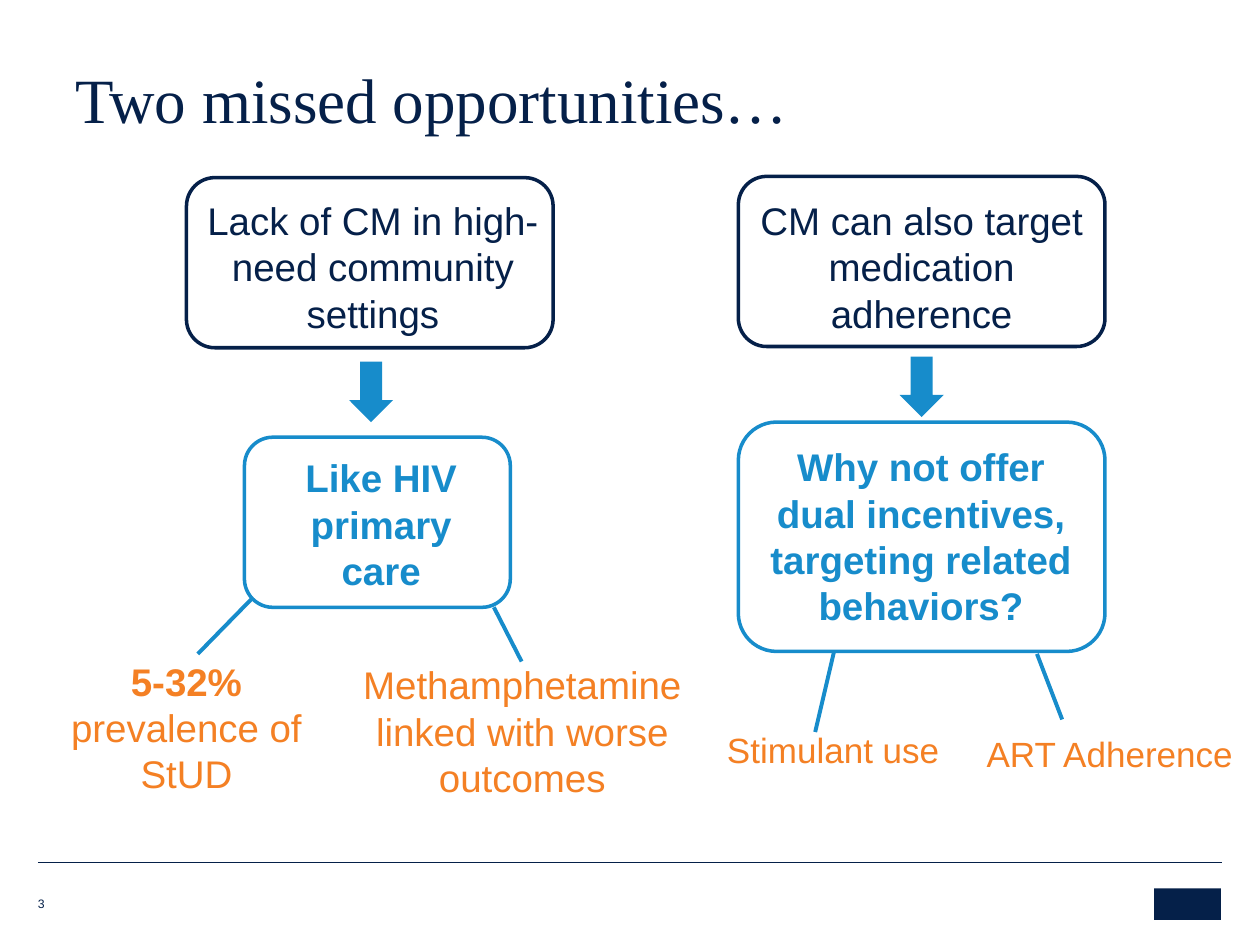
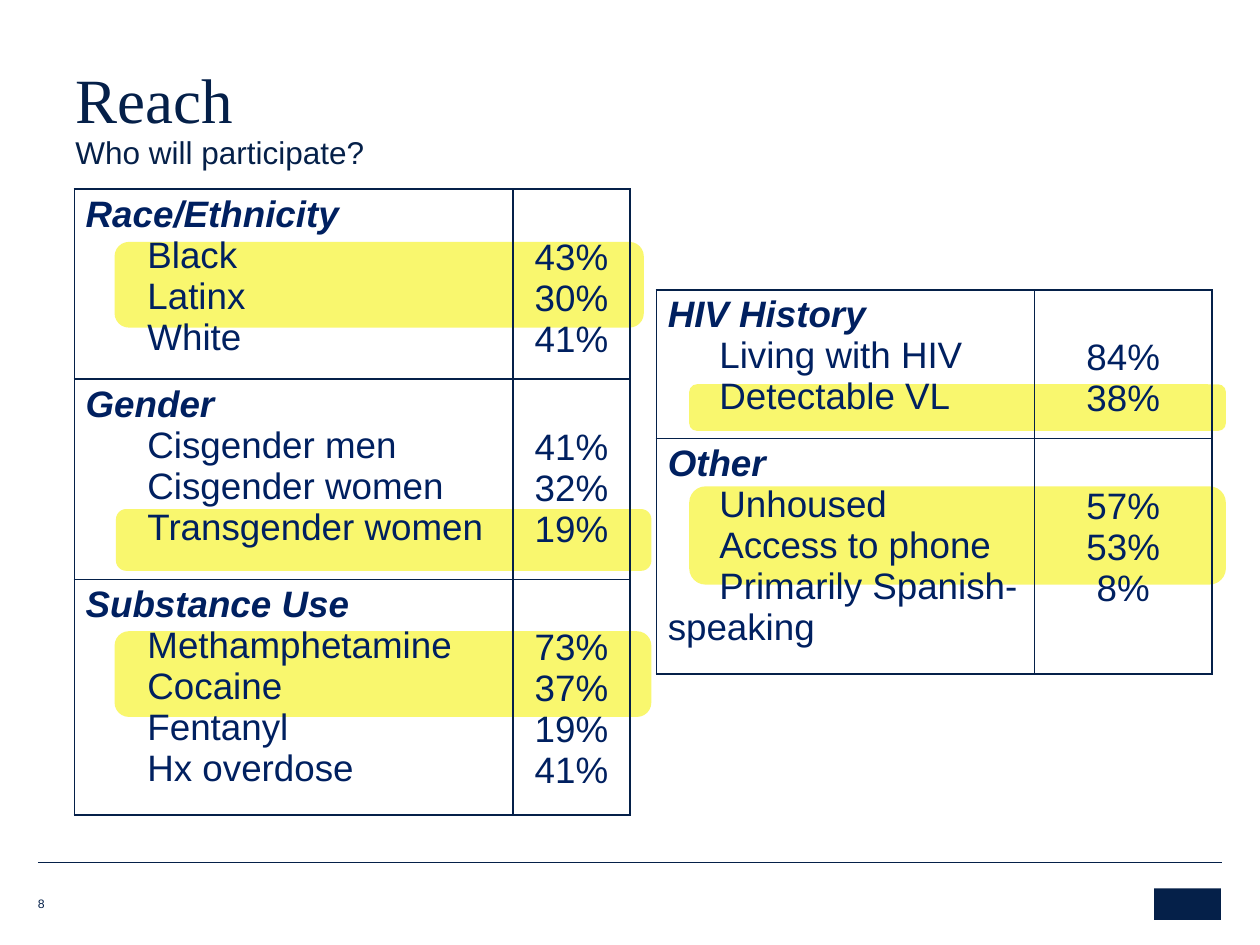
from lxml import etree
from pptx import Presentation
from pptx import util as u
from pptx.dml.color import RGBColor
from pptx.enum import shapes, text
from pptx.oxml.ns import qn

PX = 9144
COLORS = {"navy": "052049", "blue": "178CCB", "orange": "F48024",
          "table": "002060", "yellow": "F5F100"}
BODY_FONT, TITLE_FONT = "Arial", "Times New Roman"
CENTER, LEFT = text.PP_ALIGN.CENTER, text.PP_ALIGN.LEFT

DEMOGRAPHICS = [
    (151, "Race/Ethnicity", [("Black", "43%"), ("Latinx", "30%"), ("White", "41%")]),
    (159, "Gender", [("Cisgender men", "41%"), ("Cisgender women", "32%"),
                     ("Transgender women", "19%")]),
    (187, "Substance Use", [("Methamphetamine", "73%"), ("Cocaine", "37%"),
                            ("Fentanyl", "19%"), ("Hx overdose", "41%")]),
]
HEALTH = [
    (118, "HIV History", [("Living with HIV", "84%"), ("Detectable VL", "38%")]),
    (187, "Other", [("Unhoused", "57%"), ("Access to phone", "53%"),
                    ("Primarily Spanish-speaking", "8%")]),
]


def px(*lengths):
    """Turn pixel lengths into EMU."""
    return [u.Emu(length * PX) for length in lengths]


def rgb(name):
    """Look up a named colour."""
    return RGBColor.from_string(COLORS[name])


def add_run(paragraph, words, size, color, bold=False, italic=False, font=BODY_FONT):
    """Add one formatted run to a paragraph."""
    run = paragraph.add_run()
    run.text = words
    run.font.name, run.font.size = font, u.Pt(size)
    run.font.bold, run.font.italic = bold, italic
    run.font.color.rgb = rgb(color)


def set_margins(target, left, top, right, bottom):
    """Set the inner margins of a text frame or a table cell."""
    (target.margin_left, target.margin_top,
     target.margin_right, target.margin_bottom) = px(left, top, right, bottom)


def add_text(slide, at, runs, size, color, align=LEFT, anchor=text.MSO_ANCHOR.TOP,
             margins=(0, 0, 0, 0), wrap=True, font=BODY_FONT):
    """Add a one-paragraph text box from (words, bold) runs."""
    frame = slide.shapes.add_textbox(*px(*at)).text_frame
    frame.word_wrap, frame.vertical_anchor = wrap, anchor
    set_margins(frame, *margins)
    paragraph = frame.paragraphs[0]
    paragraph.alignment = align
    for words, bold in runs:
        add_run(paragraph, words, size, color, bold, font=font)
    return paragraph


def add_filled_shape(slide, kind, at, color):
    """Add a preset shape with a plain fill and no outline."""
    shape = slide.shapes.add_shape(kind, *px(*at))
    shape.shadow.inherit = False
    shape.fill.solid()
    shape.fill.fore_color.rgb = rgb(color)
    shape.line.fill.background()
    return shape


def add_line(slide, start, end, color, width):
    """Add a straight line between two points."""
    line = slide.shapes.add_connector(shapes.MSO_CONNECTOR.STRAIGHT, *px(*start, *end))
    line.line.color.rgb, line.line.width = rgb(color), u.Pt(width)
    etree.SubElement(line._element.spPr, qn("a:effectLst"))


def add_box(slide, at, words, color, margins, bold=False):
    """Add an outlined rounded box holding centred text."""
    box = slide.shapes.add_shape(shapes.MSO_SHAPE.ROUNDED_RECTANGLE, *px(*at))
    box.shadow.inherit = False
    box.fill.background()
    box.line.color.rgb, box.line.width = rgb(color), u.Pt(2)
    frame = box.text_frame
    frame.word_wrap, frame.vertical_anchor = True, text.MSO_ANCHOR.TOP
    set_margins(frame, *margins, 0)
    frame.paragraphs[0].alignment = CENTER
    add_run(frame.paragraphs[0], words, 22, color, bold)


def add_down_arrow(slide, left, top):
    """Add a blue arrow leading to the next box."""
    add_filled_shape(slide, shapes.MSO_SHAPE.DOWN_ARROW, (left, top, 35, 48), "blue")


def add_highlight(slide, at):
    """Add a translucent yellow marker band."""
    band = add_filled_shape(slide, shapes.MSO_SHAPE.ROUNDED_RECTANGLE, at, "yellow")
    color = band._element.spPr.find(qn("a:solidFill")).find(qn("a:srgbClr"))
    etree.SubElement(color, qn("a:alpha"), val="57000")


def style_cell(cell, top):
    """Clear the cell fill and draw its four borders."""
    cell.fill.background()
    set_margins(cell, 9, top, 9, 4)
    properties = cell._tc.get_or_add_tcPr()
    for index, side in enumerate(("lnL", "lnR", "lnT", "lnB")):
        border = etree.Element(qn(f"a:{side}"), w=str(u.Pt(1)))
        fill = etree.SubElement(border, qn("a:solidFill"))
        etree.SubElement(fill, qn("a:srgbClr"), val=COLORS["navy"])
        properties.insert(index, border)


def next_paragraph(frame, is_first):
    """Return the frame's first paragraph or a new one."""
    return frame.paragraphs[0] if is_first else frame.add_paragraph()


def add_group_table(slide, at, widths, indent, groups):
    """Add a table with one row per group of labelled percentages."""
    height = sum(group[0] for group in groups)
    table = slide.shapes.add_table(len(groups), 2, *px(*at, sum(widths), height)).table
    table.first_row = table.horz_banding = False
    for column, width in zip(table.columns, px(*widths)):
        column.width = width
    for row, (row_height, heading, entries) in zip(table.rows, groups):
        row.height = px(row_height)[0]
        label_cell, value_cell = row.cells
        style_cell(label_cell, 4)
        style_cell(value_cell, 38)
        add_run(label_cell.text_frame.paragraphs[0], heading, 21, "table", True, True)
        for index, (label, value) in enumerate(entries):
            paragraph = label_cell.text_frame.add_paragraph()
            paragraph._p.get_or_add_pPr().set("marL", "0")
            paragraph._p.get_or_add_pPr().set("indent", str(indent * PX))
            add_run(paragraph, label, 21, "table")
            paragraph = next_paragraph(value_cell.text_frame, index == 0)
            paragraph.alignment = CENTER
            add_run(paragraph, value, 21, "table")


def add_base_slide(presentation, title, number):
    """Add a slide with the shared title, footer rule, mark and number."""
    slide = presentation.slides.add_slide(presentation.slide_layouts[6])
    add_line(slide, (30, 684), (970, 684), "navy", 0.25)
    add_filled_shape(slide, shapes.MSO_SHAPE.RECTANGLE, (916, 705, 53, 25), "navy")
    add_text(slide, (30, 706, 27, 17), [(number, False)], 7, "navy",
             anchor=text.MSO_ANCHOR.BOTTOM)
    heading = add_text(slide, (50, 46, 894, 67), [(title, False)], 36, "navy",
                       anchor=text.MSO_ANCHOR.BOTTOM, margins=(10, 5, 10, 5),
                       font=TITLE_FONT)
    heading.line_spacing = 0.85
    return slide


def build_opportunities(presentation):
    """Build the slide with the two chains of boxes."""
    slide = add_base_slide(presentation, "Two missed opportunities…", "3")
    add_box(slide, (148, 141, 291, 135), "Lack of CM in high-need community settings",
            "navy", (8, 9, 3))
    add_box(slide, (586, 140, 291, 135), "CM can also target medication adherence",
            "navy", (7, 10, 7))
    add_box(slide, (194, 347, 211, 135), "Like HIV primary care", "blue", (13, 7, 7), True)
    add_box(slide, (586, 335, 291, 182),
            "Why not offer dual incentives, targeting related behaviors?",
            "blue", (4, 8, 5), True)
    add_down_arrow(slide, 277, 287)
    add_down_arrow(slide, 714, 283)
    for start, end in [((157, 519), (200, 475)), ((392, 482), (414, 525)),
                       ((662, 517), (647, 581)), ((823, 519), (843, 571))]:
        add_line(slide, start, end, "blue", 2.25)
    add_text(slide, (41, 522, 214, 111), [("5-32%", True), (" prevalence of StUD", False)],
             22, "orange", CENTER)
    add_text(slide, (280, 525, 269, 111),
             [("Methamphetamine linked with worse outcomes", False)], 22, "orange", CENTER)
    add_text(slide, (577, 578, 170, 34), [("Stimulant use", False)], 20, "orange", wrap=False)
    add_text(slide, (783, 581, 197, 34), [("ART Adherence", False)], 20, "orange", wrap=False)


def build_reach(presentation):
    """Build the slide with the two participant tables."""
    slide = add_base_slide(presentation, "Reach", "8")
    for at in [(547, 305, 426, 37), (92, 404, 425, 49), (91, 501, 426, 68),
               (547, 386, 426, 78), (91, 192, 420, 68)]:
        add_highlight(slide, at)
    subtitle = add_text(slide, (50, 101, 893, 49), [("Who will participate?", False)],
                        18, "navy", margins=(10, 5, 10, 5))
    subtitle.space_after = u.Pt(6)
    add_group_table(slide, (59, 150), (348, 93), 49, DEMOGRAPHICS)
    add_group_table(slide, (521, 230), (300, 141), 41, HEALTH)


def main():
    """Build and save the presentation."""
    presentation = Presentation()
    presentation.slide_width, presentation.slide_height = px(1000, 750)
    build_opportunities(presentation)
    build_reach(presentation)
    presentation.save("out.pptx")


if __name__ == "__main__":
    main()
